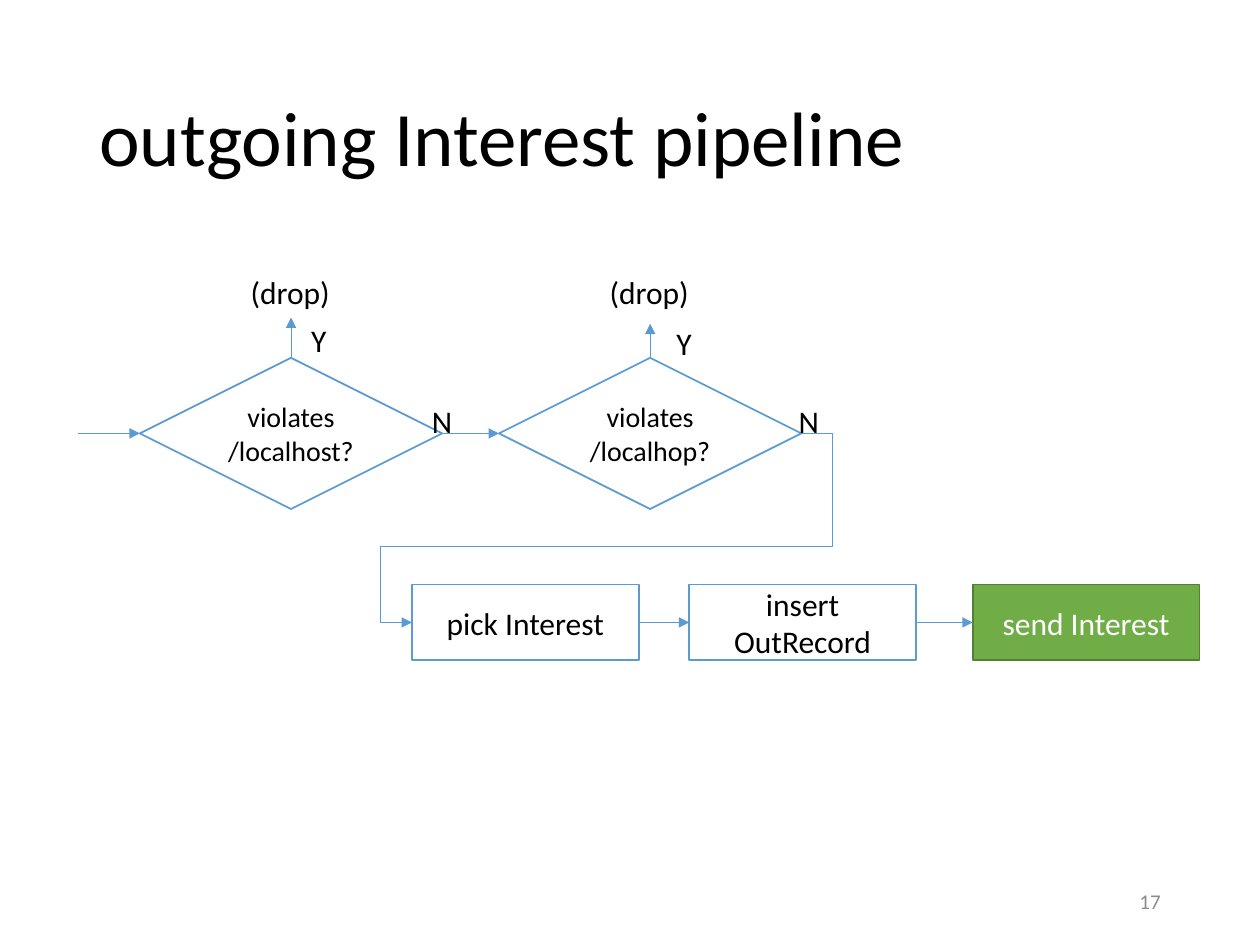
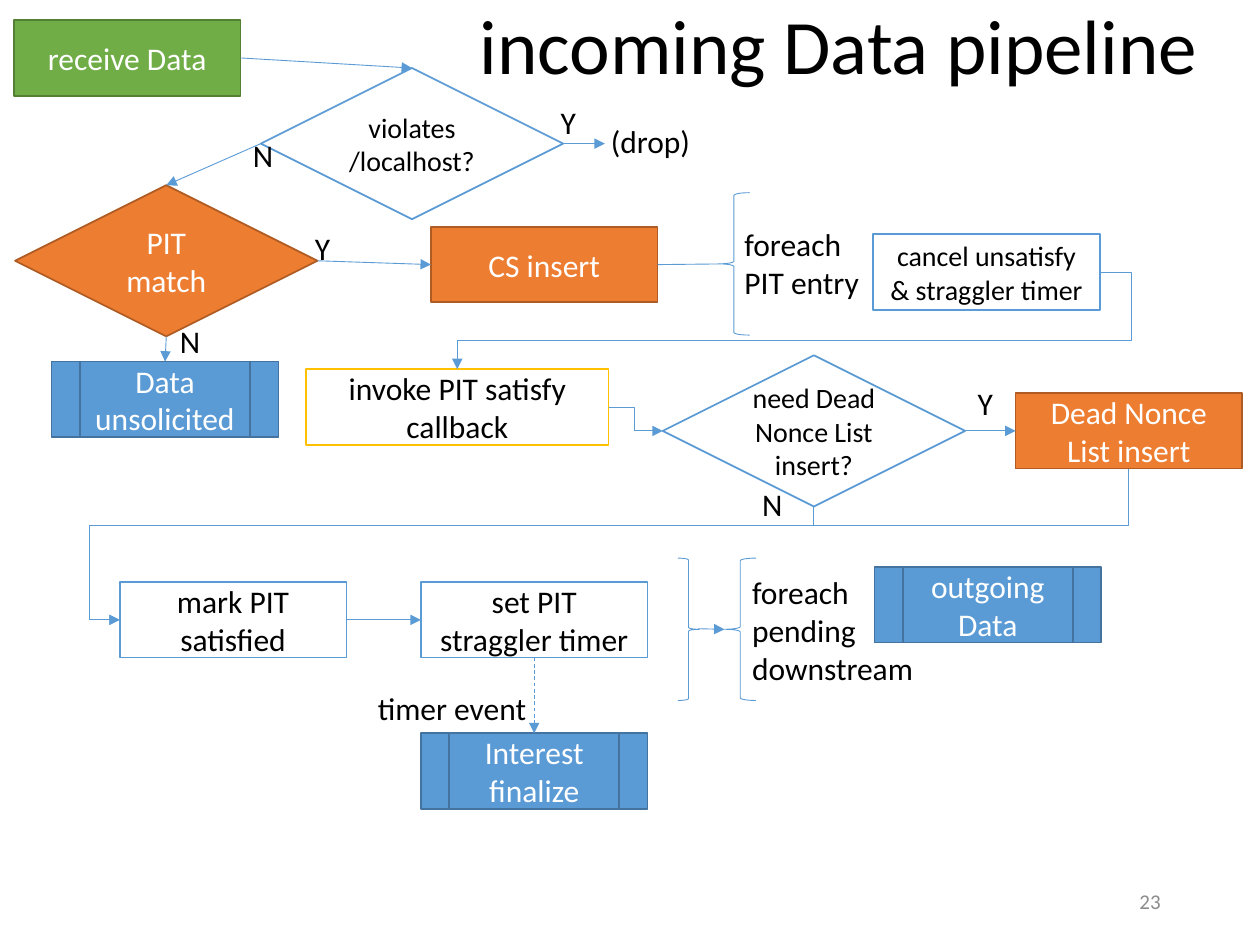
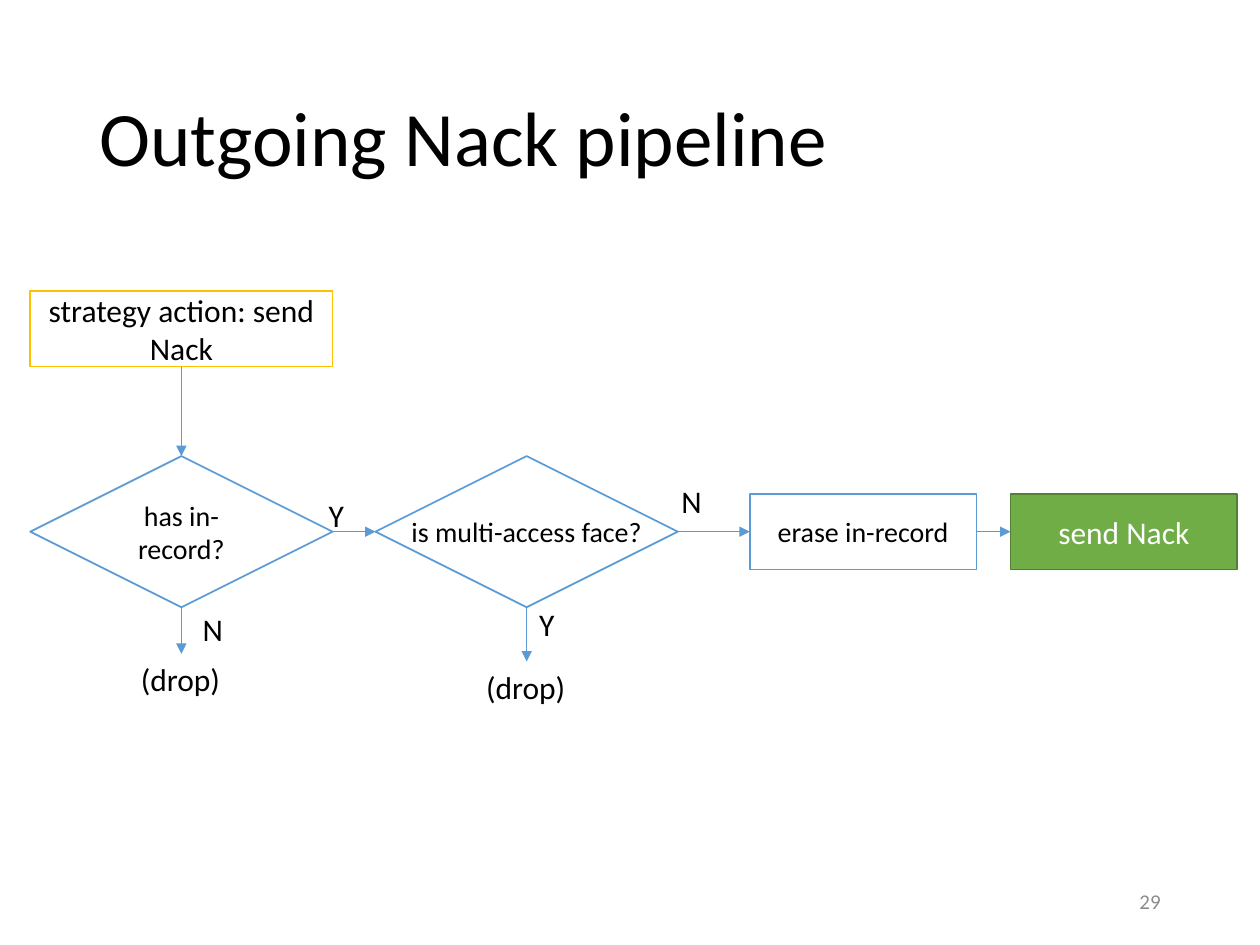
"""Build three flowchart slides that describe packet forwarding pipelines."""
from dataclasses import dataclass

from lxml.etree import SubElement
from pptx import Presentation
from pptx.dml.color import RGBColor
from pptx.enum.dml import MSO_LINE
from pptx.enum.shapes import MSO_CONNECTOR as CONN, MSO_SHAPE as SHAPE
from pptx.enum.text import MSO_ANCHOR as ANCHOR, MSO_AUTO_SIZE as AUTOSIZE, PP_ALIGN as ALIGN
from pptx.oxml.ns import qn
from pptx.util import Inches, Pt

TOP, LEFT, BOTTOM, RIGHT = range(4)


@dataclass(frozen=True)
class Theme:
    font: str = "Calibri"
    black: str = "000000"
    white: str = "FFFFFF"
    grey: str = "8C8C8C"
    blue: str = "5B9BD5"
    dark_blue: str = "43739E"
    green: str = "70AD47"
    dark_green: str = "538035"
    orange: str = "ED7D31"
    dark_orange: str = "AF5C24"
    gold: str = "FFC000"
    title_pt: float = 44
    body_pt: float = 18
    small_pt: float = 16
    number_pt: float = 12
    outline_pt: float = 1
    thin_pt: float = 0.5


T = Theme()


@dataclass(frozen=True)
class Kind:
    shape: SHAPE
    fill: str | None
    line: str
    color: str
    width: float = 1.8
    height: float = 0.6
    line_pt: float = T.outline_pt


STEP = Kind(SHAPE.RECTANGLE, T.white, T.blue, T.black)
STRATEGY = Kind(SHAPE.RECTANGLE, T.white, T.gold, T.black, 2.4)
NETWORK = Kind(SHAPE.RECTANGLE, T.green, T.dark_green, T.white)
TABLE_STEP = Kind(SHAPE.RECTANGLE, T.orange, T.dark_orange, T.white)
PIPELINE = Kind(SHAPE.FLOWCHART_PREDEFINED_PROCESS, T.blue, T.dark_blue, T.white)
DECISION = Kind(SHAPE.FLOWCHART_DECISION, T.white, T.blue, T.black, 2.4, 1.2)
TABLE_DECISION = Kind(SHAPE.FLOWCHART_DECISION, T.orange, T.dark_orange, T.white, 2.4, 1.2)
OPEN_BRACE = Kind(SHAPE.LEFT_BRACE, None, T.blue, T.black, 0.25, 1.13, T.thin_pt)
CLOSE_BRACE = Kind(SHAPE.RIGHT_BRACE, None, T.blue, T.black, 0.17, 1.13, T.thin_pt)


@dataclass(frozen=True)
class Node:
    kind: Kind
    left: float
    top: float
    text: str = ""
    size: float = T.body_pt
    wrap: bool = True


@dataclass(frozen=True)
class Port:
    node: str
    side: int


@dataclass(frozen=True)
class Point:
    x: float
    y: float


@dataclass(frozen=True)
class Link:
    begin: Port | Point
    end: Port | Point
    lanes: tuple[float, ...] = ()
    arrow: bool = True
    dashed: bool = False


@dataclass(frozen=True)
class Label:
    text: str
    left: float
    top: float


@dataclass(frozen=True)
class Page:
    title: str
    number: int
    nodes: dict[str, Node]
    links: list[Link]
    labels: list[Label]
    title_box: tuple[float, float, float, float] = (0.69, 0.4, 8.62, 1.45)


LABEL_WIDTHS = {"Y": 0.32, "N": 0.36, "(drop)": 0.84, "timer event": 1.4,
                "foreach\nPIT entry": 1.12, "foreach\npending\ndownstream": 1.49}


def rgb(value: str) -> RGBColor:
    """Turn a hex string into a colour."""
    return RGBColor.from_string(value)


def style_text(tf, size: float, color: str, align: ALIGN = ALIGN.LEFT) -> None:
    """Give every paragraph of a frame the same font and alignment."""
    for p in tf.paragraphs:
        p.alignment = align
        p.font.name, p.font.size = T.font, Pt(size)
        p.font.color.rgb = rgb(color)


def add_text(s, text: str, box: tuple[float, float, float, float], size: float,
             color: str = T.black, align: ALIGN = ALIGN.LEFT):
    """Add a wrapped, vertically centred text box and return its frame."""
    tf = s.shapes.add_textbox(*map(Inches, box)).text_frame
    tf.text, tf.word_wrap, tf.vertical_anchor = text, True, ANCHOR.MIDDLE
    style_text(tf, size, color, align)
    return tf


def add_label(s, label: Label) -> None:
    """Add a free label whose box grows with its lines."""
    height = 0.1 + 0.3 * len(label.text.split("\n"))
    box = (label.left, label.top, LABEL_WIDTHS[label.text], height)
    tf = add_text(s, label.text, box, T.body_pt)
    tf.word_wrap, tf.vertical_anchor = False, ANCHOR.TOP
    tf.auto_size = AUTOSIZE.SHAPE_TO_FIT_TEXT


def add_node(s, node: Node):
    """Draw one flowchart node and return its shape."""
    kind = node.kind
    box = (node.left, node.top, kind.width, kind.height)
    sp = s.shapes.add_shape(kind.shape, *map(Inches, box))
    sp.shadow.inherit = False
    if kind.fill:
        sp.fill.solid()
        sp.fill.fore_color.rgb = rgb(kind.fill)
    else:
        sp.fill.background()
    sp.line.color.rgb, sp.line.width = rgb(kind.line), Pt(kind.line_pt)
    if node.text:
        tf = sp.text_frame
        tf.text, tf.word_wrap, tf.vertical_anchor = node.text, node.wrap, ANCHOR.MIDDLE
        style_text(tf, node.size, kind.color, ALIGN.CENTER)
    return sp


def locate(end: Port | Point, nodes: dict[str, Node]) -> Point:
    """Return the point where a link meets a node side or ends freely."""
    if isinstance(end, Point):
        return end
    node = nodes[end.node]
    across, down = {TOP: (0.5, 0), LEFT: (0, 0.5), BOTTOM: (0.5, 1), RIGHT: (1, 0.5)}[end.side]
    return Point(node.left + across * node.kind.width, node.top + down * node.kind.height)


def bend(c, link: Link, begin: Point, end: Point) -> None:
    """Route an elbow connector along its lanes, turned when it leaves downwards."""
    xfrm = c._element.spPr.find(qn("a:xfrm"))
    dx, dy = end.x - begin.x, end.y - begin.y
    downwards = isinstance(link.begin, Port) and link.begin.side == BOTTOM
    if downwards:
        width, height = dy, abs(dx)
        c.left = Inches((begin.x + end.x - width) / 2)
        c.top = Inches((begin.y + end.y - height) / 2)
        c.width, c.height = Inches(width), Inches(height)
        xfrm.set("rot", "5400000")
        xfrm.set("flipH", "0")
    geom = c._element.spPr.find(qn("a:prstGeom"))
    geom.set("prst", f"bentConnector{len(link.lanes) + 2}")
    guides = geom.find(qn("a:avLst"))
    if guides is None:
        guides = SubElement(geom, qn("a:avLst"))
    for i, lane in enumerate(link.lanes):
        vertical = (i % 2 == 1) != downwards
        share = (lane - begin.y) / dy if vertical else (lane - begin.x) / dx
        SubElement(guides, qn("a:gd"), name=f"adj{i + 1}", fmla=f"val {round(share * 100000)}")


def add_link(s, link: Link, nodes: dict[str, Node], shapes: dict) -> None:
    """Draw a straight or bent connector, joined to the nodes it touches."""
    begin, end = locate(link.begin, nodes), locate(link.end, nodes)
    c = s.shapes.add_connector(CONN.ELBOW if link.lanes else CONN.STRAIGHT,
                               *map(Inches, (begin.x, begin.y, end.x, end.y)))
    if isinstance(link.begin, Port):
        c.begin_connect(shapes[link.begin.node], link.begin.side)
    if isinstance(link.end, Port):
        c.end_connect(shapes[link.end.node], link.end.side)
    if link.lanes:
        bend(c, link, begin, end)
    c.line.color.rgb, c.line.width = rgb(T.blue), Pt(T.thin_pt)
    if link.dashed:
        c.line.dash_style = MSO_LINE.DASH
    if link.arrow:
        SubElement(c.line._get_or_add_ln(), qn("a:tailEnd"), type="triangle")
    SubElement(c._element.spPr, qn("a:effectLst"))


def add_page(prs, page: Page) -> None:
    """Add one slide with its title, number and flowchart."""
    s = prs.slides.add_slide(prs.slide_layouts[6])
    title = add_text(s, page.title, page.title_box, T.title_pt)
    title.paragraphs[0].line_spacing = 0.9
    add_text(s, str(page.number), (7.06, 6.95, 2.25, 0.4), T.number_pt, T.grey, ALIGN.RIGHT)
    shapes = {name: add_node(s, node) for name, node in page.nodes.items()}
    for link in page.links:
        add_link(s, link, page.nodes, shapes)
    for label in page.labels:
        add_label(s, label)


OUTGOING_INTEREST = Page(
    "outgoing Interest pipeline", 17,
    {
        "localhost": Node(DECISION, 1.11, 2.84, "violates /localhost?", T.small_pt),
        "localhop": Node(DECISION, 3.96, 2.84, "violates /localhop?", T.small_pt),
        "pick": Node(STEP, 3.27, 4.64, "pick Interest"),
        "insert": Node(STEP, 5.47, 4.64, "insert OutRecord"),
        "send": Node(NETWORK, 7.72, 4.64, "send Interest"),
    },
    [
        Link(Point(0.62, 3.44), Port("localhost", LEFT)),
        Link(Port("localhost", TOP), Point(2.31, 2.52)),
        Link(Port("localhost", RIGHT), Port("localhop", LEFT)),
        Link(Port("localhop", TOP), Point(5.16, 2.57)),
        Link(Port("localhop", RIGHT), Port("pick", LEFT), (6.61, 4.34, 3.02)),
        Link(Port("pick", RIGHT), Port("insert", LEFT)),
        Link(Port("insert", RIGHT), Port("send", LEFT)),
    ],
    [
        Label("(drop)", 1.89, 2.12), Label("Y", 2.37, 2.5), Label("N", 3.33, 3.14),
        Label("(drop)", 4.74, 2.12), Label("Y", 5.27, 2.52), Label("N", 6.24, 3.14),
    ],
)

INCOMING_DATA = Page(
    "incoming Data pipeline", 23,
    {
        "receive": Node(NETWORK, 0.11, 0.16, "receive Data"),
        "localhost": Node(DECISION, 2.07, 0.54, "violates /localhost?", T.small_pt),
        "match": Node(TABLE_DECISION, 0.12, 1.47, "PIT match"),
        "unsolicited": Node(PIPELINE, 0.41, 2.87, "Data unsolicited"),
        "cs": Node(TABLE_STEP, 3.42, 1.8, "CS insert"),
        "each entry": Node(OPEN_BRACE, 5.7, 1.53),
        "cancel": Node(STEP, 6.93, 1.86, "cancel unsatisfy & straggler timer", T.small_pt),
        "invoke": Node(STRATEGY, 2.43, 2.93, "invoke PIT satisfy callback"),
        "need": Node(DECISION, 5.26, 2.82, "need Dead Nonce List insert?", T.small_pt),
        "nonce": Node(TABLE_STEP, 8.06, 3.12, "Dead Nonce List insert"),
        "mark": Node(STEP, 0.95, 4.62, "mark PIT satisfied"),
        "set": Node(STEP, 3.34, 4.62, "set PIT straggler timer"),
        "finalize": Node(PIPELINE, 3.34, 5.82, "Interest finalize"),
        "end entry": Node(CLOSE_BRACE, 5.38, 4.43),
        "each downstream": Node(OPEN_BRACE, 5.75, 4.43),
        "outgoing": Node(PIPELINE, 6.94, 4.5, "outgoing Data"),
    },
    [
        Link(Port("receive", RIGHT), Port("localhost", TOP)),
        Link(Port("localhost", RIGHT), Point(4.8, 1.14)),
        Link(Port("localhost", LEFT), Port("match", TOP)),
        Link(Port("match", BOTTOM), Port("unsolicited", TOP)),
        Link(Port("match", RIGHT), Port("cs", LEFT)),
        Link(Port("cs", RIGHT), Port("each entry", LEFT), arrow=False),
        Link(Port("cancel", RIGHT), Port("invoke", TOP), (8.98, 2.7)),
        Link(Port("invoke", RIGHT), Port("need", LEFT), (5.04,)),
        Link(Port("need", RIGHT), Port("nonce", LEFT)),
        Link(Port("need", BOTTOM), Port("mark", LEFT), (4.17, 0.71)),
        Link(Port("nonce", BOTTOM), Port("mark", LEFT), (4.17, 0.71)),
        Link(Port("mark", RIGHT), Port("set", LEFT)),
        Link(Port("set", BOTTOM), Port("finalize", TOP), dashed=True),
        Link(Point(5.54, 4.99), Port("each downstream", LEFT)),
    ],
    [
        Label("Y", 4.35, 0.77), Label("(drop)", 4.75, 0.92), Label("N", 1.91, 1.03),
        Label("Y", 2.4, 1.77), Label("N", 1.33, 2.51), Label("foreach\nPIT entry", 5.81, 1.74),
        Label("Y", 7.66, 3), Label("N", 5.95, 3.8), Label("timer event", 2.9, 5.42),
        Label("foreach\npending\ndownstream", 5.87, 4.5),
    ],
    (3.71, -0.07, 6.15, 0.92),
)

OUTGOING_NACK = Page(
    "Outgoing Nack pipeline", 29,
    {
        "action": Node(STRATEGY, 0.24, 2.31, "strategy action: send Nack"),
        "has": Node(DECISION, 0.24, 3.62, "has in-record?", T.small_pt),
        "multi": Node(DECISION, 2.98, 3.62, "is multi-access face?", T.small_pt, False),
        "erase": Node(STEP, 5.95, 3.92, "erase in-record", T.small_pt),
        "send": Node(NETWORK, 8.02, 3.92, "send Nack"),
    },
    [
        Link(Port("action", BOTTOM), Port("has", TOP)),
        Link(Port("has", BOTTOM), Point(1.44, 5.19)),
        Link(Port("has", RIGHT), Port("multi", LEFT)),
        Link(Port("multi", BOTTOM), Point(4.18, 5.25)),
        Link(Port("multi", RIGHT), Port("erase", LEFT)),
        Link(Port("erase", RIGHT), Port("send", LEFT)),
    ],
    [
        Label("N", 1.51, 4.79), Label("(drop)", 1.02, 5.19), Label("Y", 2.51, 3.89),
        Label("Y", 4.18, 4.75), Label("(drop)", 3.76, 5.25), Label("N", 5.31, 3.78),
    ],
)


def main() -> None:
    """Build the slides and save the file."""
    prs = Presentation()
    prs.slide_width, prs.slide_height = Inches(10), Inches(7.5)
    for page in (OUTGOING_INTEREST, INCOMING_DATA, OUTGOING_NACK):
        add_page(prs, page)
    prs.save("out.pptx")


if __name__ == "__main__":
    main()
